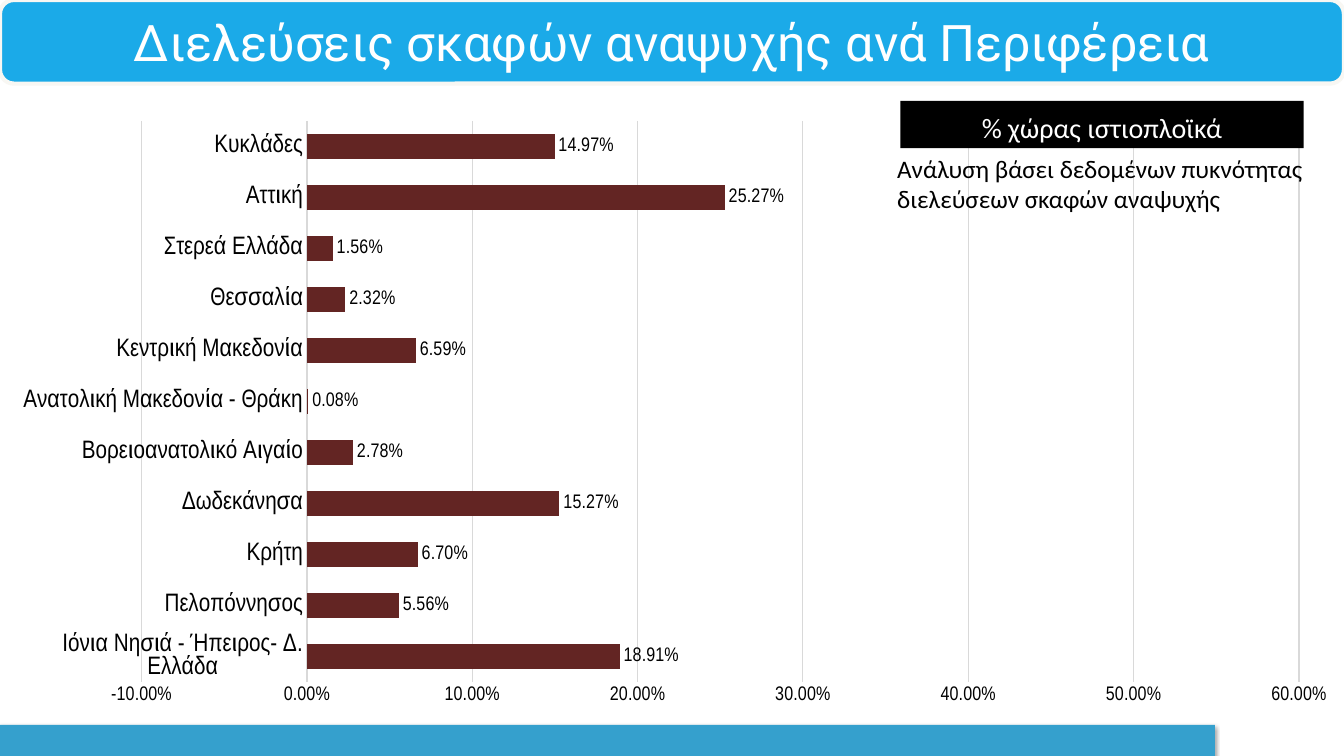
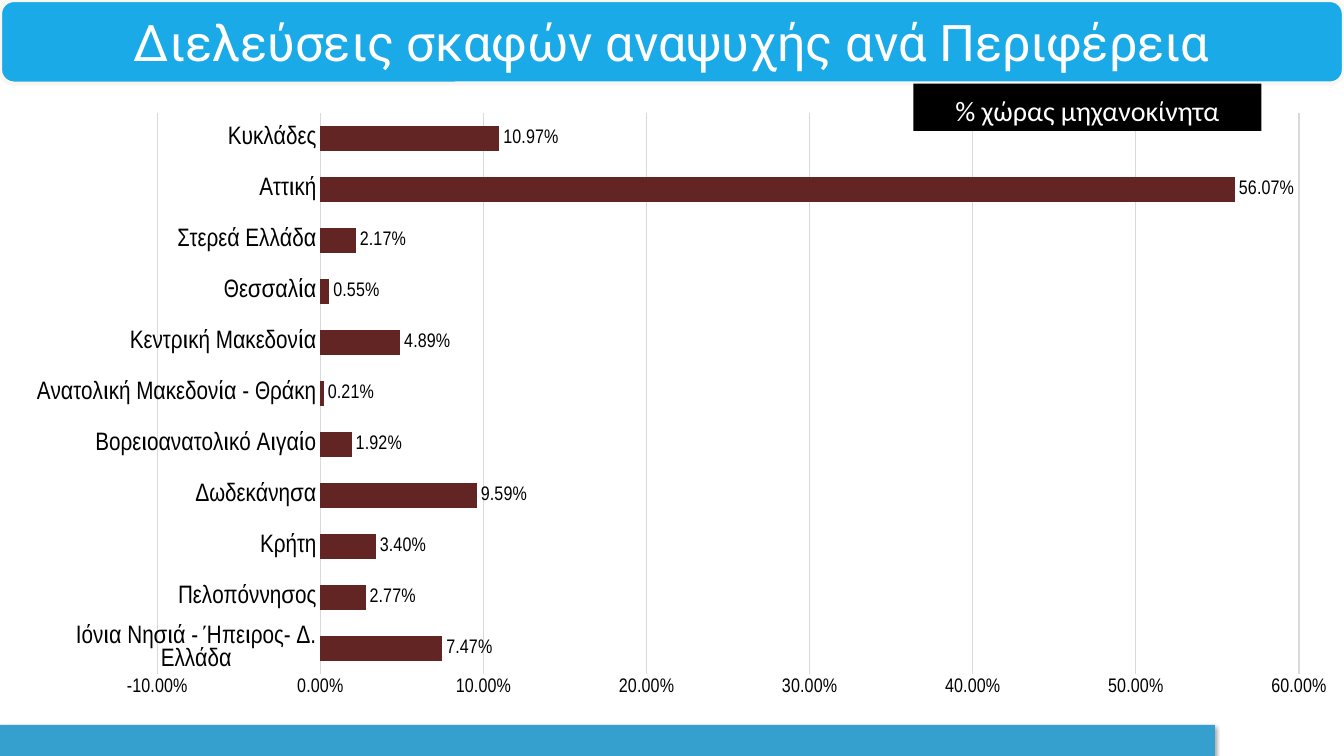
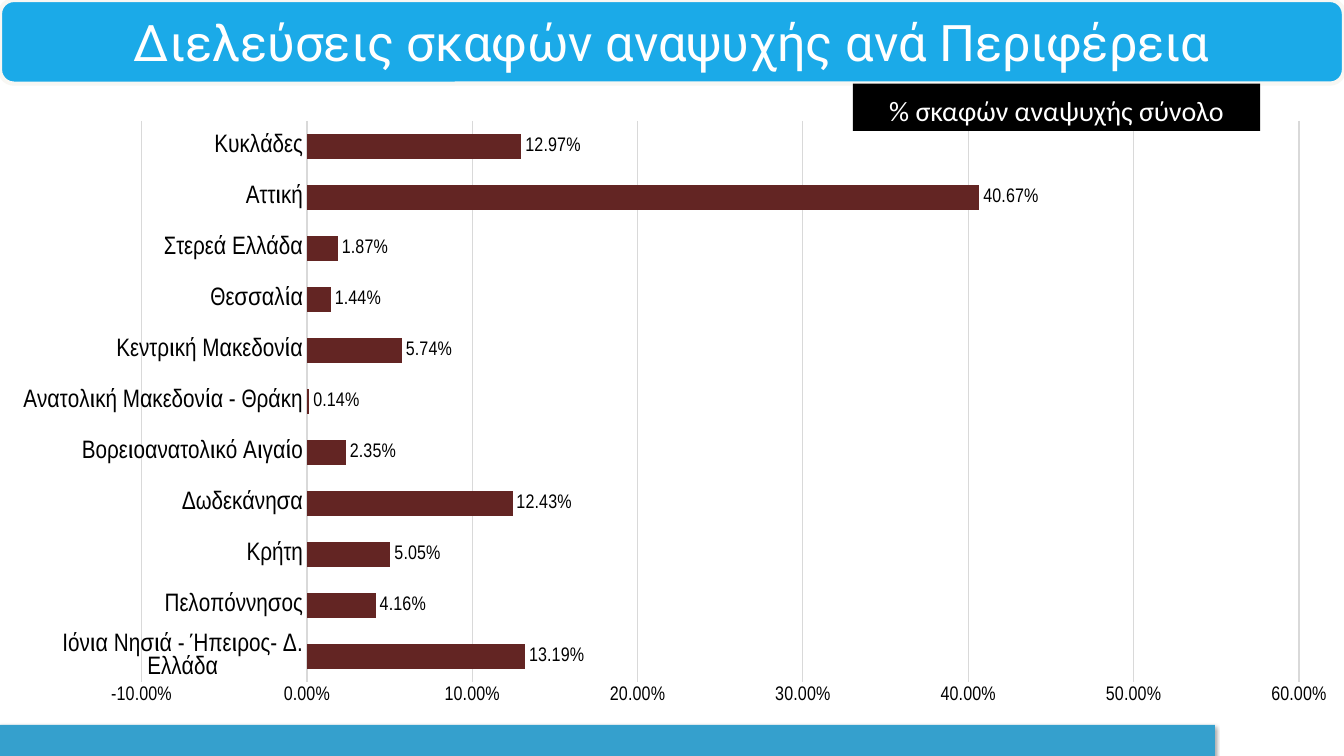
"""Build three slides of bar charts on leisure-craft passages by Greek region."""
from lxml import etree
from pptx import Presentation
from pptx.chart.data import CategoryChartData
from pptx.dml.color import RGBColor
from pptx.enum.chart import XL_CHART_TYPE, XL_LABEL_POSITION, XL_TICK_MARK
from pptx.enum.shapes import MSO_SHAPE
from pptx.enum.text import MSO_ANCHOR, MSO_AUTO_SIZE, PP_ALIGN
from pptx.oxml import parse_xml
from pptx.oxml.ns import nsdecls, qn
from pptx.util import Inches, Pt

BAR = XL_CHART_TYPE.BAR_CLUSTERED
OUTSIDE = XL_LABEL_POSITION.OUTSIDE_END
NO_TICK = XL_TICK_MARK.NONE
RECT, ROUNDED = MSO_SHAPE.RECTANGLE, MSO_SHAPE.ROUNDED_RECTANGLE
TOP, MIDDLE = MSO_ANCHOR.TOP, MSO_ANCHOR.MIDDLE
LEFT, CENTER = PP_ALIGN.LEFT, PP_ALIGN.CENTER
GROW, FIXED = MSO_AUTO_SIZE.SHAPE_TO_FIT_TEXT, MSO_AUTO_SIZE.NONE


class Theme:
    white = RGBColor.from_string("FFFFFF")
    black = RGBColor.from_string("000000")
    title_fill = RGBColor.from_string("1BAAE8")
    title_line = RGBColor.from_string("F8F7F3")
    footer = RGBColor.from_string("35A0CD")
    bar = RGBColor.from_string("632523")
    grid = RGBColor.from_string("D9D9D9")
    title_font, body_font, chart_font = "Roboto", "Calibri", "Arial Narrow"
    title_size, tag_size, note_size = Pt(36), Pt(20), Pt(18)
    category_size, value_size = Pt(18), Pt(14)


TITLE = "Διελεύσεις σκαφών αναψυχής ανά Περιφέρεια"
PERCENT = "0.00%"
REGIONS = [
    "Ιόνια Νησιά - Ήπειρος- Δ. Ελλάδα", "Πελοπόννησος", "Κρήτη", "Δωδεκάνησα",
    "Βορειοανατολικό Αιγαίο", "Ανατολική Μακεδονία - Θράκη", "Κεντρική Μακεδονία",
    "Θεσσαλία", "Στερεά Ελλάδα", "Αττική", "Κυκλάδες",
]
WIDE_PLOT = {"x": 0.095, "y": 0.033, "w": 0.883, "h": 0.914}
NARROW_PLOT = {"x": 0.107, "y": 0.02, "w": 0.871, "h": 0.914}
SLIDES = [
    {"tag": "% χώρας ιστιοπλοϊκά", "tag_at": (8.93, 1, 4, 0.47), "plot": WIDE_PLOT,
     "note": "Ανάλυση βάσει δεδομένων πυκνότητας διελεύσεων σκαφών αναψυχής",
     "values": [0.1891, 0.0556, 0.067, 0.1527, 0.0278, 0.0008,
                0.0659, 0.0232, 0.0156, 0.2527, 0.1497]},
    {"tag": "% χώρας μηχανοκίνητα", "tag_at": (9.06, 0.83, 3.45, 0.47), "plot": NARROW_PLOT,
     "note": None,
     "values": [0.0747, 0.0277, 0.034, 0.0959, 0.0192, 0.0021,
                0.0489, 0.0055, 0.0217, 0.5607, 0.1097]},
    {"tag": "% σκαφών αναψυχής σύνολο", "tag_at": (8.46, 0.83, 4.04, 0.47), "plot": WIDE_PLOT,
     "note": None,
     "values": [0.1319, 0.0416, 0.0505, 0.1243, 0.0235, 0.0014,
                0.0574, 0.0144, 0.0187, 0.4067, 0.1297]},
]


def set_text(sp, text, size, font, color, align=LEFT, anchor=TOP, fit=GROW,
             spacing=None, after=None):
    tf = sp.text_frame
    tf.word_wrap = True
    tf.auto_size = fit
    tf.vertical_anchor = anchor
    p = tf.paragraphs[0]
    p.alignment = align
    p.line_spacing = spacing
    p.space_after = after
    r = p.add_run()
    r.text = text
    r.font.size = size
    r.font.name = font
    r.font.color.rgb = color


def add_block(s, shape, at, fill):
    sp = s.shapes.add_shape(shape, *map(Inches, at))
    sp.shadow.inherit = False
    sp.fill.solid()
    sp.fill.fore_color.rgb = fill
    sp.line.fill.background()
    return sp


prs = Presentation()
prs.slide_width, prs.slide_height = Inches(13.33), Inches(7.5)
blank = prs.slide_layouts[6]
slides = [prs.slides.add_slide(blank) for _ in SLIDES]

footer = add_block(slides[0], RECT, (0, 7.19, 12.05, 0.31), Theme.footer)
footer.element.spPr.find(qn("a:effectLst")).append(parse_xml(
    f'<a:outerShdw {nsdecls("a")} blurRad="{Pt(3.1)}" dist="{Pt(1.8)}" dir="5400000" '
    'rotWithShape="0"><a:srgbClr val="000000"><a:alpha val="35000"/></a:srgbClr></a:outerShdw>'))
footer.element.nvSpPr.cNvPr.set("id", "100")
prs.slide_master.shapes.element.append(footer.element)

for s, content in zip(slides, SLIDES):
    data = CategoryChartData(number_format=PERCENT)
    data.categories = REGIONS
    data.add_series("Series 1", content["values"])
    area = map(Inches, (0.17, 1, 13, 6.09))
    chart = s.shapes.add_chart(BAR, *area, data).chart
    chart.has_title = False
    chart.has_legend = False
    chart.font.name = Theme.chart_font
    chart.font.size = Theme.value_size
    chart.font.color.rgb = Theme.black

    plot = chart.plots[0]
    plot.gap_width = 100
    plot.vary_by_categories = False
    fill = plot.series[0].format.fill
    fill.solid()
    fill.fore_color.rgb = Theme.bar
    plot.has_data_labels = True
    labels = plot.data_labels
    labels.show_value = True
    labels.position = OUTSIDE
    labels.number_format = PERCENT
    labels.number_format_is_linked = False

    regions, scale = chart.category_axis, chart.value_axis
    for axis, size in ((regions, Theme.category_size), (scale, Theme.value_size)):
        axis.major_tick_mark = axis.minor_tick_mark = NO_TICK
        axis.tick_labels.font.size = size
        axis.tick_labels.font.name = Theme.chart_font
        axis.tick_labels.font.color.rgb = Theme.black
    scale.minimum_scale, scale.maximum_scale, scale.major_unit = -0.1, 0.6, 0.1
    scale.tick_labels.number_format = PERCENT
    scale.tick_labels.number_format_is_linked = False
    scale.format.line.fill.background()
    scale.has_major_gridlines = True
    for line in (regions.format.line, scale.major_gridlines.format.line):
        line.color.rgb = Theme.grid
        line.width = Pt(0.75)

    area_xml = chart.element.chart.plotArea
    for old in area_xml.findall(qn("c:layout")):
        area_xml.remove(old)
    layout = etree.Element(qn("c:layout"))
    manual = etree.SubElement(layout, qn("c:manualLayout"))
    settings = {"layoutTarget": "inner", "xMode": "edge", "yMode": "edge", **content["plot"]}
    for key, value in settings.items():
        etree.SubElement(manual, qn(f"c:{key}")).set("val", str(value))
    area_xml.insert(0, layout)

    title = add_block(s, ROUNDED, (0, 0, 13.33, 0.83), Theme.title_fill)
    title.line.color.rgb = Theme.title_line
    title.line.width = Pt(3)
    set_text(title, TITLE, Theme.title_size, Theme.title_font, Theme.white,
             align=CENTER, anchor=MIDDLE, fit=FIXED)

    tag = add_block(s, RECT, content["tag_at"], Theme.black)
    set_text(tag, content["tag"], Theme.tag_size, Theme.body_font, Theme.white,
             align=CENTER, spacing=1.15, after=Pt(8))

    if content["note"]:
        note = s.shapes.add_textbox(*map(Inches, (8.8, 1.47, 4.54, 0.71)))
        set_text(note, content["note"], Theme.note_size, Theme.body_font, Theme.black)

prs.save("out.pptx")
